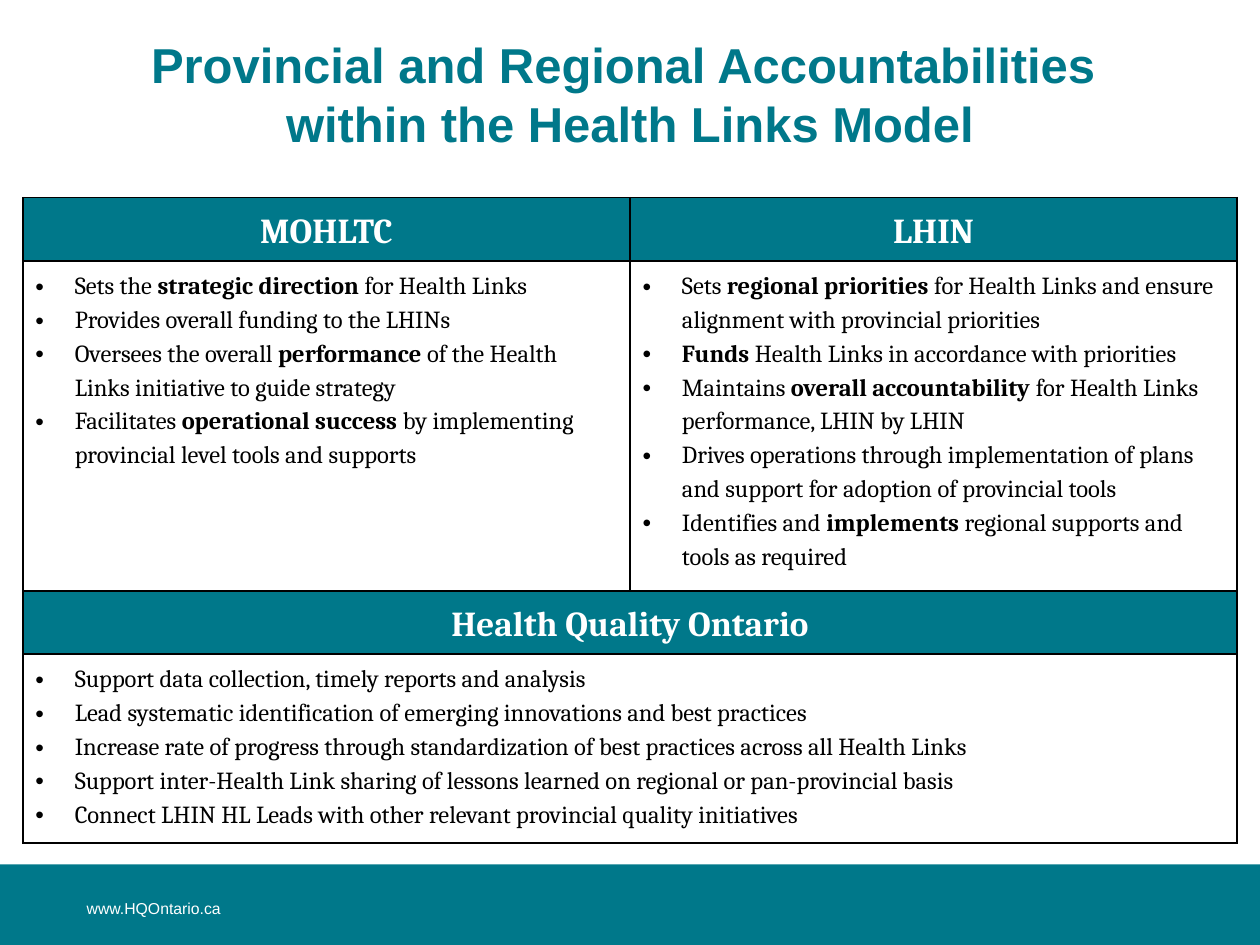
import pptx
import pptx.util
import pptx.dml.color
import pptx.enum.shapes
import pptx.enum.text
import lxml.etree

Pt = pptx.util.Pt
HUES = {"teal": "00788A", "white": "FFFFFF", "black": "000000"}
SPACE = "http://schemas.openxmlformats.org/drawingml/2006/main"
TITLE = "Provincial and Regional Accountabilities \vwithin the Health Links Model"
MINISTRY = [
    "Sets the **strategic direction **for Health Links",
    "Provides overall funding to the LHINs",
    "Oversees the overall **performance **of the Health Links initiative to guide strategy",
    "Facilitates **operational success **by implementing provincial level tools and supports",
]
REGION = [
    "Sets **regional priorities **for Health Links and ensure alignment with provincial priorities",
    "**Funds** Health Links in accordance with priorities",
    "Maintains **overall accountability **for Health Links performance, LHIN by LHIN",
    "Drives operations through implementation of plans and support for adoption of provincial tools",
    "Identifies and **implements** regional supports and tools as required",
]
QUALITY = [
    "Support data collection, timely reports and analysis",
    "Lead systematic identification of emerging innovations and best practices",
    "Increase rate of progress through standardization of best practices across all Health Links",
    "Support inter-Health Link sharing of lessons learned on regional or pan-provincial basis",
    "Connect LHIN HL Leads with other relevant provincial quality initiatives",
]


def hue(name):
    """Return the named colour."""
    return pptx.dml.color.RGBColor.from_string(HUES[name])


def style(font, face, size, color, bold=None):
    """Format a font."""
    font.name, font.size, font.bold = face, Pt(size), bold
    font.color.rgb = hue(color)


def place(shape, box):
    """Move a shape to a box of left, top, width and height."""
    shape.left, shape.top, shape.width, shape.height = map(Pt, box)


def add_title(slide, box):
    """Fill and format the title placeholder."""
    title = slide.shapes.title
    place(title, box)
    frame = title.text_frame
    frame.text = TITLE
    frame.auto_size = pptx.enum.text.MSO_AUTO_SIZE.NONE
    frame.vertical_anchor = pptx.enum.text.MSO_ANCHOR.MIDDLE
    para = frame.paragraphs[0]
    para.alignment = pptx.enum.text.PP_ALIGN.CENTER
    style(para.font, "Arial", 28, "teal", True)


def add_foot(slide, box):
    """Draw the bottom bar with its web address."""
    left, top, width, height = box
    kind = pptx.enum.shapes.MSO_SHAPE.RECTANGLE
    bar = slide.shapes.add_shape(kind, *map(Pt, box))
    bar.shadow.inherit = False
    bar.fill.solid()
    bar.fill.fore_color.rgb = hue("teal")
    bar.line.fill.background()
    spot = (left + 42.5, top + 16, 222, 19)
    frame = slide.shapes.add_textbox(*map(Pt, spot)).text_frame
    frame.word_wrap = True
    frame.text = "www.HQOntario.ca"
    style(frame.paragraphs[0].font, "Arial", 9, "white")


def paint(cell, color):
    """Give a cell its black borders and its fill."""
    props = cell._tc.get_or_add_tcPr()
    for side in ("lnL", "lnR", "lnT", "lnB"):
        edge = lxml.etree.SubElement(props, f"{{{SPACE}}}{side}", w=str(Pt(1)))
        fill = lxml.etree.SubElement(edge, f"{{{SPACE}}}solidFill")
        lxml.etree.SubElement(fill, f"{{{SPACE}}}srgbClr", val=HUES["black"])
    cell.fill.solid()
    cell.fill.fore_color.rgb = hue(color)


def write_head(cell, text):
    """Write a centred heading in a cell."""
    cell.text = text
    para = cell.text_frame.paragraphs[0]
    para.alignment = pptx.enum.text.PP_ALIGN.CENTER
    para.line_spacing = 1.2
    style(para.font, "Cambria", 20, "white", True)


def write_list(cell, items):
    """Write bulleted items, with bold between double stars."""
    frame = cell.text_frame
    for row, item in enumerate(items):
        para = frame.add_paragraph() if row else frame.paragraphs[0]
        props = para._p.get_or_add_pPr()
        props.set("marL", str(Pt(22.5)))
        props.set("indent", str(-Pt(22.5)))
        lxml.etree.SubElement(props, f"{{{SPACE}}}buFont", typeface="Arial")
        lxml.etree.SubElement(props, f"{{{SPACE}}}buChar", char="•")
        para.line_spacing = 1.2
        style(para.font, "Cambria", 14, "black")
        for turn, part in enumerate(item.split("**")):
            if part:
                run = para.add_run()
                run.text = part
                run.font.bold = turn % 2 == 1
    

def add_grid(slide, box):
    """Build the table of duties."""
    table = slide.shapes.add_table(4, 2, *map(Pt, box)).table
    table.first_row = table.horz_banding = False
    for row, high in zip(table.rows, (35, 181, 35, 103.5)):
        row.height = Pt(high)
    for row in range(4):
        for col in range(2):
            paint(table.cell(row, col), "white" if row % 2 else "teal")
    for row in (2, 3):
        table.cell(row, 0).merge(table.cell(row, 1))
    parts = [
        (0, 0, "MOHLTC", MINISTRY),
        (0, 1, "LHIN", REGION),
        (2, 0, "Health Quality Ontario", QUALITY),
    ]
    for row, col, head, items in parts:
        write_head(table.cell(row, col), head)
        write_list(table.cell(row + 1, col), items)


def main():
    """Build and save the slide."""
    deck = pptx.Presentation()
    deck.slide_width, deck.slide_height = Pt(720), Pt(540)
    slide = deck.slides.add_slide(deck.slide_layouts[5])
    add_foot(slide, (0, 494, 720, 46))
    add_title(slide, (36, 21.6, 648, 64))
    add_grid(slide, (13, 113, 694, 354.5))
    deck.save("out.pptx")


if __name__ == "__main__":
    main()
